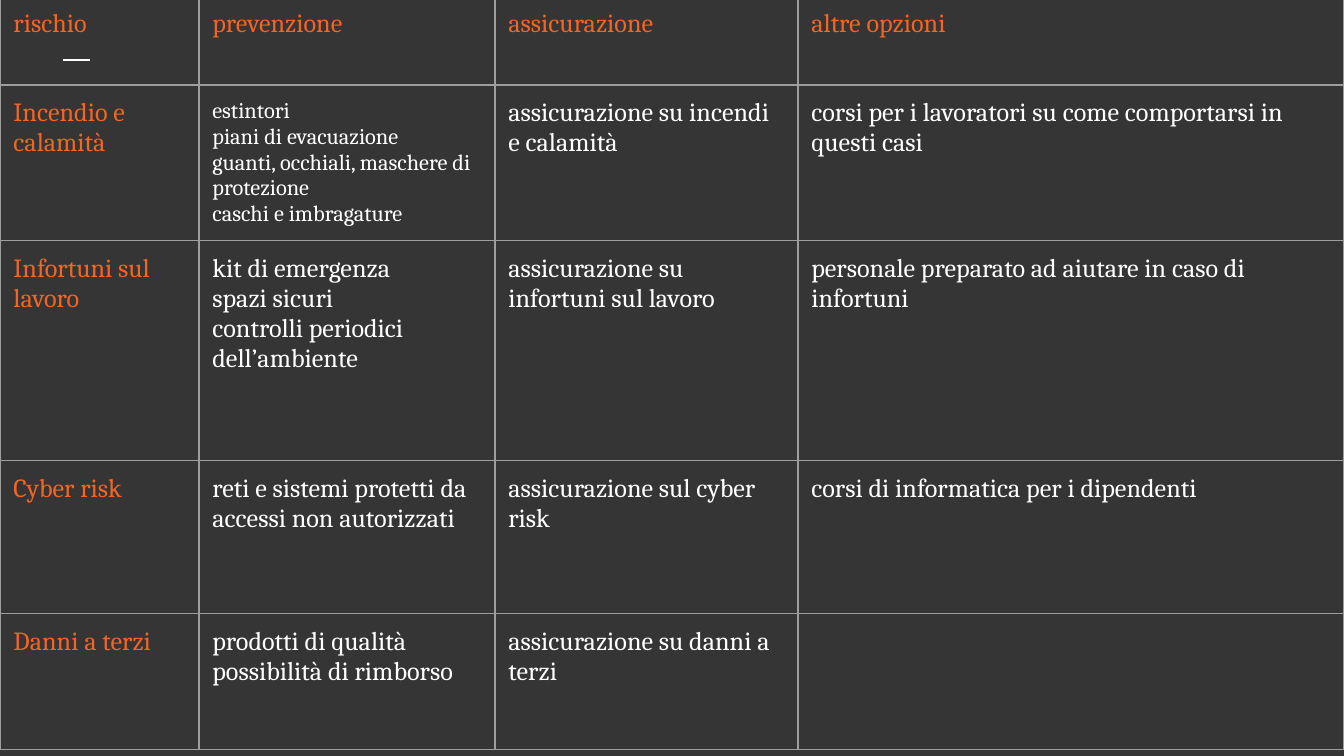
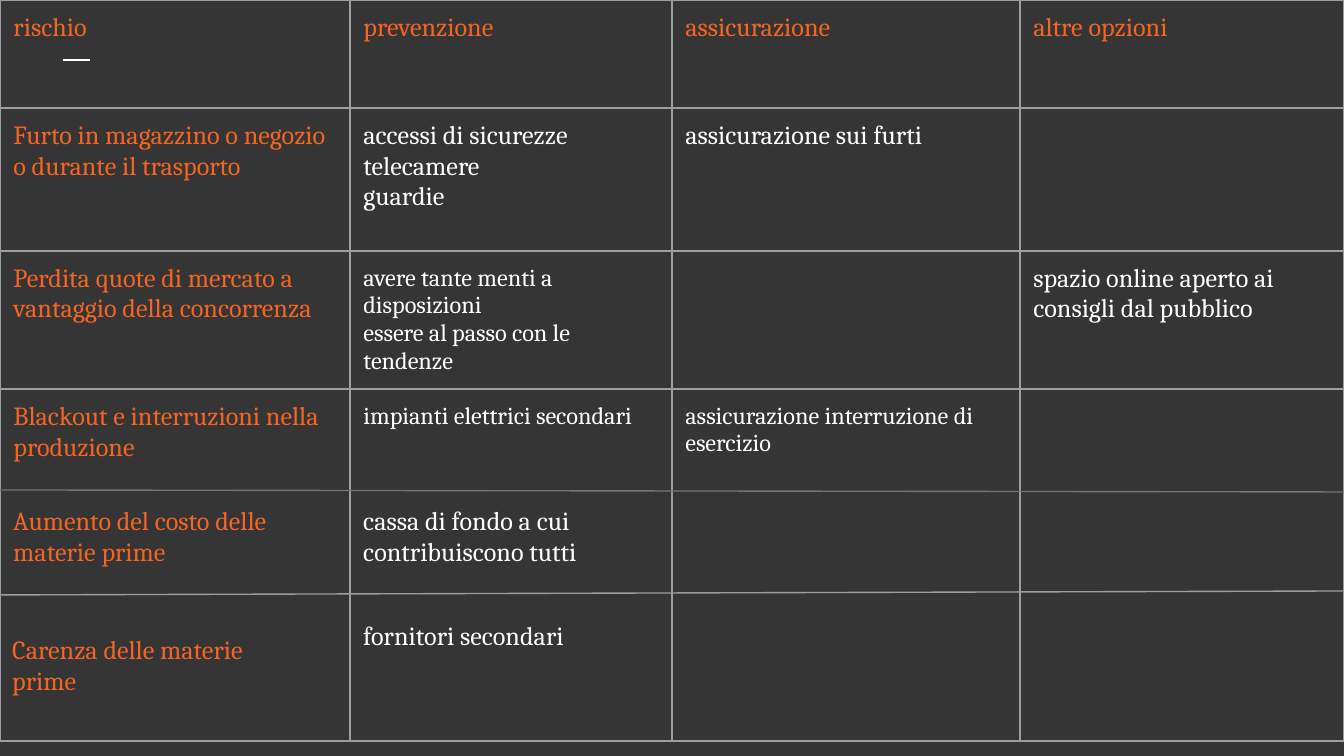
from lxml import etree
from pptx import Presentation
from pptx.dml.color import RGBColor
from pptx.enum.shapes import MSO_CONNECTOR
from pptx.enum.text import MSO_AUTO_SIZE
from pptx.oxml.ns import qn
from pptx.util import Inches, Pt

STRAIGHT = MSO_CONNECTOR.STRAIGHT
FIT_TEXT = MSO_AUTO_SIZE.SHAPE_TO_FIT_TEXT
SCALE = 914400 / 134.4  # EMU per px
W, H = 1344, 756
COLORS = {"bg": "353535", "label": "F46524", "text": "FFFFFF",
          "grid": "9E9E9E", "rule": "757575"}
FONT = "Cambria"
INSETS = {f"margin_{side}": Inches(0.1) for side in ("left", "top", "right", "bottom")}
HEADER = ["rischio", "prevenzione", "assicurazione", "altre opzioni"]


def px(n):
    return round(n * SCALE)


def rgb(name):
    return RGBColor.from_string(COLORS[name])


def set_attrs(obj, values):
    for name, value in values.items():
        setattr(obj, name, value)


class Deck:
    def __init__(self):
        self.prs = Presentation()
        set_attrs(self.prs, {"slide_width": px(W), "slide_height": px(H)})
        self.s = None

    def slide(self):
        self.s = self.prs.slides.add_slide(self.prs.slide_layouts[6])
        fill = self.s.background.fill
        fill.solid()
        fill.fore_color.rgb = rgb("bg")
        self.line(63, 60, 90, 60, "text", 1.5)

    def line(self, x1, y1, x2, y2, color="grid", width=0.75):
        c = self.s.shapes.add_connector(STRAIGHT, px(x1), px(y1), px(x2), px(y2))
        c.line.color.rgb = rgb(color)
        c.line.width = Pt(width)
        etree.SubElement(c._element.spPr, qn("a:effectLst"))

    def paragraphs(self, tf, text, color, size=14):
        for i, line in enumerate(text.split("\n")):
            p = tf.add_paragraph() if i else tf.paragraphs[0]
            r = p.add_run()
            r.text = line
            set_attrs(r.font, {"name": FONT, "size": Pt(size), "bold": False})
            r.font.color.rgb = rgb(color)

    def text(self, x, y, w, h, text, color):
        tf = self.s.shapes.add_textbox(px(x), px(y), px(w), px(h)).text_frame
        set_attrs(tf, {"word_wrap": True, "auto_size": FIT_TEXT, **INSETS})
        self.paragraphs(tf, text, color)

    def borders(self, cell):
        tcPr = cell._tc.get_or_add_tcPr()
        for side in ("lnL", "lnR", "lnT", "lnB"):
            ln = etree.SubElement(tcPr, qn(f"a:{side}"), w=str(Pt(0.75)))
            fill = etree.SubElement(ln, qn("a:solidFill"))
            etree.SubElement(fill, qn("a:srgbClr"), val=COLORS["grid"])

    def table(self, y, cols, heights, rows, sizes):
        """Risk table; sizes maps (row, column) to a font size other than 14."""
        rows = [HEADER] + rows
        frame = self.s.shapes.add_table(len(rows), len(cols), 0, px(y),
                                        px(sum(cols)), px(sum(heights)))
        tbl = frame.table
        set_attrs(tbl, {"first_row": False, "horz_banding": False})
        for col, w in zip(tbl.columns, cols):
            col.width = px(w)
        for row, h in zip(tbl.rows, heights):
            row.height = px(h)
        for i, row in enumerate(rows):
            for j, text in enumerate(row):
                cell = tbl.cell(i, j)
                set_attrs(cell, INSETS)
                self.borders(cell)
                cell.fill.background()
                if text:
                    color = "text" if i and j else "label"
                    self.paragraphs(cell.text_frame, text, color, sizes.get((i, j), 14))


def main():
    d = Deck()

    # Slide 1: fire, injuries, cyber risk, third-party damage
    d.slide()
    d.table(-4, [199, 296, 303, 546], [89, 124, 220, 153, 136], [
        ["Incendio e calamità",
         "estintori\npiani di evacuazione\n"
         "guanti, occhiali, maschere di protezione\ncaschi e imbragature",
         "assicurazione su incendi e calamità",
         "corsi per i lavoratori su come comportarsi in questi casi"],
        ["Infortuni sul lavoro",
         "kit di emergenza\nspazi sicuri\ncontrolli periodici dell’ambiente",
         "assicurazione su infortuni sul lavoro",
         "personale preparato ad aiutare in caso di infortuni"],
        ["Cyber risk",
         "reti e sistemi protetti da accessi non autorizzati",
         "assicurazione sul cyber risk",
         "corsi di informatica per i dipendenti"],
        ["Danni a terzi",
         "prodotti di qualità\npossibilità di rimborso",
         "assicurazione su danni a terzi", ""],
    ], {(1, 1): 12})

    # Slide 2: theft, market, blackout
    d.slide()
    d.table(0, [350, 322, 348, 324], [108, 143, 138, 352], [
        ["Furto in magazzino o negozio o durante il trasporto",
         "accessi di sicurezze\ntelecamere\nguardie",
         "assicurazione sui furti", ""],
        ["Perdita quote di mercato a vantaggio della concorrenza",
         "avere tante menti a disposizioni\nessere al passo con le tendenze",
         "", "spazio online aperto ai consigli dal pubblico"],
        ["Blackout e interruzioni nella produzione",
         "impianti elettrici secondari",
         "assicurazione interruzione di esercizio", ""],
    ], {(2, 1): 13, (3, 1): 13, (3, 2): 13})

    # Raw materials: two extra rows ruled across the last table row
    d.line(-3, 595, 1347, 591)
    d.text(0, 491, 362, 90, "Aumento del costo delle materie prime", "label")
    d.text(350, 491, 266, 90, "cassa di fondo a cui contribuiscono tutti", "text")
    d.line(0, 490, 1347, 492, "rule")
    d.text(-1, 620, 302, 90, "Carenza delle materie prime", "label")
    d.text(350, 606, 355, 59, "fornitori secondari", "text")

    d.prs.save("out.pptx")


if __name__ == "__main__":
    main()
